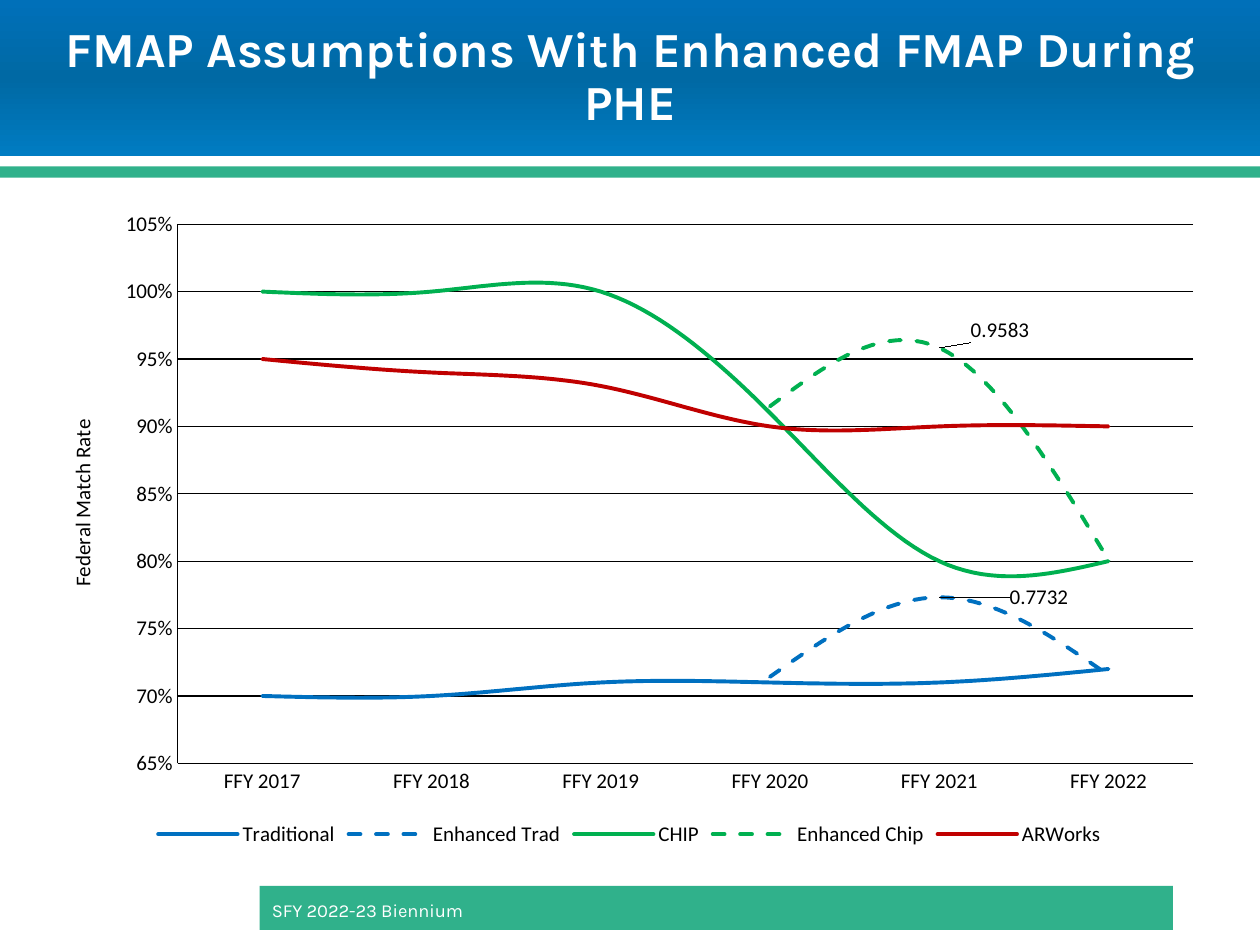
from dataclasses import dataclass
from typing import Optional

from lxml import etree
from pptx import Presentation
from pptx.chart.data import CategoryChartData
from pptx.dml.color import RGBColor
from pptx.enum.chart import XL_CHART_TYPE as ChartType
from pptx.enum.chart import XL_LABEL_POSITION as LabelPosition
from pptx.enum.chart import XL_LEGEND_POSITION as LegendPosition
from pptx.enum.chart import XL_TICK_MARK as TickMark
from pptx.enum.dml import MSO_LINE as LineDash
from pptx.enum.shapes import MSO_SHAPE as ShapeType
from pptx.enum.text import MSO_ANCHOR as Anchor
from pptx.enum.text import PP_ALIGN as Align
from pptx.oxml import parse_xml
from pptx.oxml.ns import nsdecls, qn
from pptx.util import Inches, Pt

COLORS = {
    "band_top": "0070B9", "band_middle": "0069A4", "band_bottom": "007CC2",
    "accent": "30B18B", "white": "FFFFFF", "black": "000000",
    "blue": "0070C0", "green": "00B050", "red": "C00000",
}
C15 = "http://schemas.microsoft.com/office/drawing/2012/chart"


@dataclass(frozen=True)
class Box:
    left: float
    top: float
    width: float
    height: float

    def lengths(self) -> tuple:
        return tuple(Inches(n) for n in (self.left, self.top, self.width, self.height))


@dataclass(frozen=True)
class MatchRate:
    name: str
    values: tuple
    color: str
    dashed: bool = False
    label_offset: Optional[tuple] = None


CHART = Box(0.33, 1.58, 9.33, 5.18)
PLOT = Box(1.08, 0.2, 8.06, 4.28)
YEARS = [f"FFY {year}" for year in range(2017, 2023)]
RATES = [
    MatchRate("Traditional", (0.7, 0.7, 0.71, 0.71, 0.71, 0.72), "blue"),
    MatchRate("Enhanced Trad", (None, None, None, 0.7142, 0.7732, 0.7155), "blue", True, (0.52, 0)),
    MatchRate("CHIP", (1, 1, 1, 0.91, 0.8, 0.8), "green"),
    MatchRate("Enhanced Chip", (None, None, None, 0.9149, 0.9583, 0.8009), "green", True, (0.21, -0.14)),
    MatchRate("ARWorks", (0.95, 0.94, 0.93, 0.9, 0.9, 0.9), "red"),
]


def rgb(name: str) -> RGBColor:
    return RGBColor.from_string(COLORS[name])


def style_font(font, name: str, size: float, color: str, bold: bool = False) -> None:
    font.name, font.size, font.bold = name, Pt(size), bold
    font.color.rgb = rgb(color)


def add_bar(slide, box: Box, color: str = "accent"):
    shape = slide.shapes.add_shape(ShapeType.RECTANGLE, *box.lengths())
    shape.shadow.inherit = False
    shape.fill.solid()
    shape.fill.fore_color.rgb = rgb(color)
    shape.line.fill.background()
    return shape


def shade_band(shape) -> None:
    shape.fill.gradient()
    shape.fill.gradient_angle = 270
    stops = shape._element.spPr.find(".//" + qn("a:gsLst"))
    for stop in list(stops):
        stops.remove(stop)
    for index, name in enumerate(("band_top", "band_middle", "band_bottom")):
        stop = etree.SubElement(stops, qn("a:gs"), pos=str(index * 50000))
        etree.SubElement(stop, qn("a:srgbClr"), val=COLORS[name])


def add_text(slide, box: Box, text: str, size: float, spacing: float,
             align: Align = Align.LEFT, bold: bool = False) -> None:
    frame = slide.shapes.add_textbox(*box.lengths()).text_frame
    frame.word_wrap = True
    frame.vertical_anchor = Anchor.MIDDLE
    paragraph = frame.paragraphs[0]
    paragraph.text = text
    paragraph.alignment, paragraph.line_spacing = align, spacing
    style_font(paragraph.font, "Karla", size, "white", bold)


def manual_layout(left: float, top: float, width: float = 0, height: float = 0,
                  edge: bool = True):
    parts = {"layoutTarget": "inner"} if width else {}
    if edge:
        parts |= {"xMode": "edge", "yMode": "edge"}
    parts |= {"x": left / CHART.width, "y": top / CHART.height}
    if width:
        parts |= {"w": width / CHART.width, "h": height / CHART.height}
    body = "".join(f'<c:{key} val="{value}"/>' for key, value in parts.items())
    return parse_xml(f'<c:layout {nsdecls("c")}><c:manualLayout>{body}</c:manualLayout></c:layout>')


def place(parent, layout, index: int) -> None:
    for old in parent.findall(qn("c:layout")):
        parent.remove(old)
    parent.insert(index, layout)


def style_line(line, color: str, width: float) -> None:
    line.color.rgb = rgb(color)
    line.width = Pt(width)


def label_peak(series, offset: tuple) -> None:
    label = series.points[4].data_label
    label.position = LabelPosition.RIGHT
    labels = series._element.find(qn("c:dLbls"))
    place(labels.find(qn("c:dLbl")), manual_layout(*offset, edge=False), 1)
    labels.append(parse_xml(
        f'<c:extLst {nsdecls("c")}><c:ext uri="{{CE6537A1-D6FC-4f65-9D91-7224C49458BB}}" '
        f'xmlns:c15="{C15}"><c15:showLeaderLines val="1"/></c:ext></c:extLst>'))


def style_axes(chart) -> None:
    for axis in (chart.category_axis, chart.value_axis):
        axis.major_tick_mark = axis.minor_tick_mark = TickMark.NONE
        style_font(axis.tick_labels.font, "Calibri", 12, "black")
        style_line(axis.format.line, "black", 0.75)
    axis = chart.value_axis
    axis.minimum_scale, axis.maximum_scale, axis.major_unit = 0.65, 1.05, 0.05
    axis.tick_labels.number_format = "0%"
    axis.tick_labels.number_format_is_linked = False
    style_line(axis.major_gridlines.format.line, "black", 0.75)
    paragraph = axis.axis_title.text_frame.paragraphs[0]
    paragraph.text = "Federal Match Rate"
    style_font(paragraph.font, "Calibri", 12, "black")
    place(axis.axis_title._element, manual_layout(0.18, 1.72), 1)


def add_rate_chart(slide) -> None:
    data = CategoryChartData(number_format="General")
    data.categories = YEARS
    for rate in RATES:
        data.add_series(rate.name, rate.values)
    chart = slide.shapes.add_chart(ChartType.LINE, *CHART.lengths(), data).chart
    style_font(chart.font, "Calibri", 12, "black")
    chart.has_title = False
    chart.has_legend = True
    chart.legend.position = LegendPosition.BOTTOM
    chart.legend.include_in_layout = False
    style_font(chart.legend.font, "Calibri", 12, "black")
    style_axes(chart)
    chart.plots[0].vary_by_categories = False
    for series, rate in zip(chart.plots[0].series, RATES):
        series.smooth = True
        style_line(series.format.line, rate.color, 2.25)
        series._element.find(".//" + qn("a:ln")).set("cap", "rnd")
        if rate.dashed:
            series.format.line.dash_style = LineDash.DASH
        if rate.label_offset:
            label_peak(series, rate.label_offset)
    plot_area = chart._chartSpace.find(".//" + qn("c:plotArea"))
    place(plot_area, manual_layout(PLOT.left, PLOT.top, PLOT.width, PLOT.height), 0)


def main() -> None:
    """Build the federal match rate slide."""
    presentation = Presentation()
    presentation.slide_width, presentation.slide_height = Inches(10), Inches(7.5)
    slide = presentation.slides.add_slide(presentation.slide_layouts[6])
    shade_band(add_bar(slide, Box(0, 0, 10, 1.24)))
    add_bar(slide, Box(0, 1.32, 10, 0.09))
    add_bar(slide, Box(2.06, 7.03, 7.25, 0.35))
    add_text(slide, Box(0.25, 0.12, 9.5, 1), "FMAP Assumptions With Enhanced FMAP During PHE",
             28, 0.9, Align.CENTER, True)
    add_text(slide, Box(2.06, 7.04, 3.34, 0.34), "SFY 2022-23 Biennium", 10.5, 1.2)
    add_rate_chart(slide)
    presentation.save("out.pptx")


if __name__ == "__main__":
    main()
